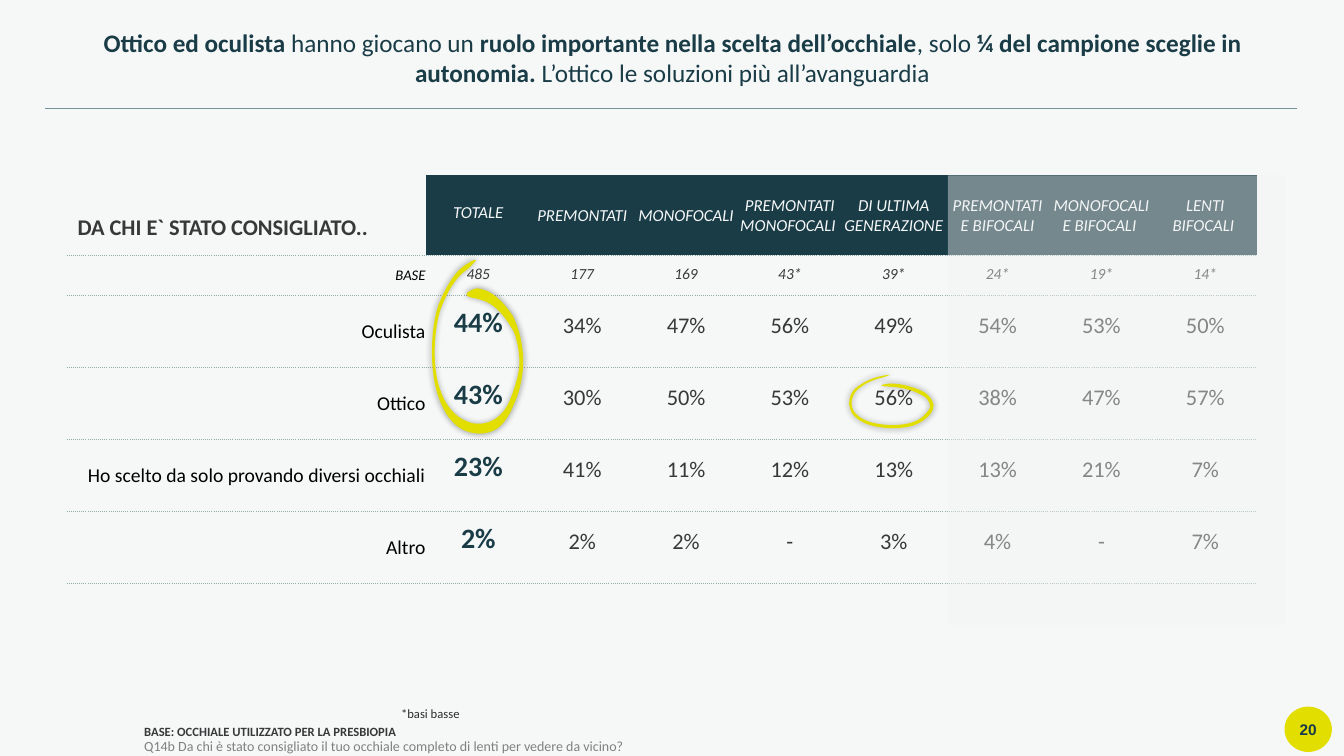
from dataclasses import dataclass

from lxml import etree
from pptx import Presentation
from pptx.dml.color import RGBColor
from pptx.enum import shapes, text
from pptx.oxml import ns
from pptx.util import Inches, Pt

COLOURS = {
    "paper": "F6F8F8", "navy": "1A3C47", "number": "193B47", "ink": "383839", "black": "000000",
    "note": "2B2B2B", "grey": "808080", "rule": "76929C", "dots": "95ACAC", "lime": "E2DE00",
    "veil": "F2F2F2",
}
HEADERS = [
    "TOTALE", "PREMONTATI", "MONOFOCALI", "PREMONTATI MONOFOCALI ", "DI ULTIMA GENERAZIONE ",
    "PREMONTATI E BIFOCALI", "MONOFOCALI E BIFOCALI ", "LENTI BIFOCALI ",
]
ANSWERS = [
    ["Oculista", "44%", "34%", "47%", "56%", "49%", "54%", "53%", "50%"],
    ["Ottico", "43%", "30%", "50%", "53%", "56%", "38%", "47%", "57%"],
    ["Ho scelto da solo provando diversi occhiali",
     "23%", "41%", "11%", "12%", "13%", "13%", "21%", "7%"],
    ["Altro", "2%", "2%", "2%", "-", "3%", "4%", "-", "7%"],
]
BASES = ["BASE", "485", "177", "169", "43*", "39*", "24*", "19*", "14*"]
ANSWERS_HEIGHT = 2.86
ROW_HEIGHTS = [0.79, 0.4] + [ANSWERS_HEIGHT / len(ANSWERS)] * len(ANSWERS)
COLUMN_WIDTHS = [3.57] + [1.03] * len(HEADERS)
LOOP_WIDTH, LOOP_HEIGHT = 0.94, 1.76
LOOP_START = (0.41, 0.05)
LOOP_CURVES = [
    ((0.41, 0.07), (0.27, 0.07), (0.11, 0.45)), ((0.03, 0.63), (0, 1.08), (0.09, 1.36)),
    ((0.18, 1.64), (0.32, 1.73), (0.46, 1.75)), ((0.59, 1.76), (0.73, 1.74), (0.84, 1.48)),
    ((0.89, 1.37), (0.94, 1.22), (0.94, 1.01)), ((0.93, 0.8), (0.88, 0.68), (0.84, 0.59)),
    ((0.65, 0.3), (0.5, 0.32), (0.48, 0.31)), ((0.4, 0.33), (0.3, 0.39), (0.47, 0.41)),
    ((0.52, 0.43), (0.68, 0.43), (0.85, 0.75)), ((0.88, 0.83), (0.91, 0.96), (0.9, 1.1)),
    ((0.88, 1.23), (0.84, 1.35), (0.79, 1.46)), ((0.7, 1.63), (0.56, 1.67), (0.44, 1.65)),
    ((0.32, 1.62), (0.19, 1.54), (0.11, 1.3)), ((0.03, 1.06), (0.06, 0.7), (0.12, 0.52)),
    ((0.26, 0.15), (0.4, 0.13), (0.41, 0.1)), ((0.47, 0.04), (0.51, 0), (0.41, 0.05)),
]


@dataclass(frozen=True)
class Area:
    left: float
    top: float
    width: float
    height: float

    def lengths(self) -> list:
        return [Inches(side) for side in (self.left, self.top, self.width, self.height)]


@dataclass(frozen=True)
class Style:
    size: float
    colour: str
    bold: bool = False
    italic: bool = False
    font: str = "Calibri"


@dataclass(frozen=True)
class Label:
    area: Area
    words: str
    style: Style
    align: text.PP_ALIGN = text.PP_ALIGN.LEFT


LABELS = [
    Label(Area(0.58, 2.07, 3.26, 0.37), "DA CHI E` STATO CONSIGLIATO..",
          Style(16, "ink", bold=True), text.PP_ALIGN.CENTER),
    Label(Area(3.88, 6.95, 2.04, 0.25), "*basi basse", Style(9, "note")),
]
LOOPS = [Area(4.25, 2.55, 0.94, 1.76), Area(8.39, 3.71, 0.87, 0.54)]
TITLE = [
    ("Ottico ed oculista ", True), ("hanno giocano un ", False),
    ("ruolo importante nella scelta dell’occhiale", True), (", solo ", False),
    ("¼ del campione sceglie in autonomia. ", True),
    ("L’ottico le soluzioni più all’avanguardia", False),
]
SOURCE = [
    ("BASE: OCCHIALE UTILIZZATO PER LA PRESBIOPIA", Style(9, "ink", bold=True)),
    ("Q14b Da chi è stato consigliato il tuo occhiale completo di lenti per vedere da vicino?",
     Style(10, "grey")),
]


def colour(name: str) -> RGBColor:
    return RGBColor.from_string(COLOURS[name])


def add_span(para, words: str, style: Style) -> None:
    span = para.add_run()
    span.text = words
    font = span.font
    font.name, font.size = style.font, Pt(style.size)
    font.bold, font.italic = style.bold, style.italic
    font.color.rgb = colour(style.colour)


def clear_margins(frame) -> None:
    frame.margin_left = frame.margin_top = frame.margin_right = frame.margin_bottom = 0


def paint(shape, fill: str) -> None:
    shape.shadow.inherit = False
    shape.fill.solid()
    shape.fill.fore_color.rgb = colour(fill)
    shape.line.fill.background()


def add_colour(parent, name: str, alpha: int = 100) -> None:
    tone = etree.SubElement(parent, ns.qn("a:srgbClr"), val=COLOURS[name])
    if alpha < 100:
        etree.SubElement(tone, ns.qn("a:alpha"), val=str(alpha * 1000))


def add_title(page) -> None:
    box = page.shapes.title
    box.left, box.top, box.width, box.height = Area(0.34, 0.22, 12.66, 0.71).lengths()
    frame = box.text_frame
    frame.auto_size = text.MSO_AUTO_SIZE.SHAPE_TO_FIT_TEXT
    frame.vertical_anchor = text.MSO_ANCHOR.TOP
    para = frame.paragraphs[0]
    para.alignment = text.PP_ALIGN.CENTER
    for words, bold in TITLE:
        add_span(para, words, Style(18, "navy", bold))


def add_rule(page) -> None:
    rule = page.shapes.add_connector(
        shapes.MSO_CONNECTOR.STRAIGHT, Inches(0.45), Inches(1.08), Inches(12.86), Inches(1.08))
    rule.line.color.rgb = colour("rule")
    rule.line.width = Pt(0.5)
    etree.SubElement(rule._element.spPr, ns.qn("a:effectLst"))


def add_page_number(page) -> None:
    badge = page.shapes.add_shape(
        shapes.MSO_SHAPE.OVAL, *Area(12.74, 7.01, 0.47, 0.45).lengths())
    paint(badge, "lime")
    clear_margins(badge.text_frame)
    para = badge.text_frame.paragraphs[0]
    para.alignment = text.PP_ALIGN.CENTER
    add_span(para, "20", Style(11, "number", bold=True, font="Arial"))


def add_source(page) -> None:
    frame = page.shapes.add_textbox(*Area(1.43, 6.56, 11.91, 0.93).lengths()).text_frame
    frame.word_wrap = True
    frame.vertical_anchor = text.MSO_ANCHOR.BOTTOM
    clear_margins(frame)
    for index, (words, style) in enumerate(SOURCE):
        para = frame.add_paragraph() if index else frame.paragraphs[0]
        para.line_spacing = 0.95
        add_span(para, words, style)


def add_label(page, label: Label) -> None:
    frame = page.shapes.add_textbox(*label.area.lengths()).text_frame
    frame.word_wrap = True
    frame.auto_size = text.MSO_AUTO_SIZE.SHAPE_TO_FIT_TEXT
    para = frame.paragraphs[0]
    para.alignment = label.align
    add_span(para, label.words, label.style)


def cell_style(row: int, column: int) -> Style:
    if row == 0:
        return Style(12, "paper", italic=True)
    if row == 1:
        return Style(11, "ink", italic=True) if column else Style(10.5, "black", italic=True)
    if column == 0:
        return Style(14, "black")
    return Style(20, "navy", bold=True) if column == 1 else Style(16, "ink")


def add_dotted_bottom(cell) -> None:
    edge = etree.Element(ns.qn("a:lnB"), w=str(Pt(0.5)))
    add_colour(etree.SubElement(edge, ns.qn("a:solidFill")), "dots")
    etree.SubElement(edge, ns.qn("a:prstDash"), val="sysDot")
    cell._tc.get_or_add_tcPr().insert(0, edge)


def fill_cell(cell, words: str, row: int, column: int) -> None:
    cell.margin_left = cell.margin_top = cell.margin_right = Inches(0.01)
    cell.margin_bottom = 0
    cell.vertical_anchor = text.MSO_ANCHOR.MIDDLE
    if row == 0 and column:
        cell.fill.solid()
        cell.fill.fore_color.rgb = colour("navy")
    else:
        cell.fill.background()
    add_dotted_bottom(cell)
    if words:
        para = cell.text_frame.paragraphs[0]
        para.alignment = text.PP_ALIGN.CENTER if column else text.PP_ALIGN.RIGHT
        if column == 1 or (row and column):
            para.line_spacing = Pt(11)
        add_span(para, words, cell_style(row, column))


def add_answers(page) -> None:
    rows = [[""] + HEADERS, BASES, *ANSWERS]
    area = Area(0.66, 1.74, sum(COLUMN_WIDTHS), sum(ROW_HEIGHTS))
    table = page.shapes.add_table(len(rows), len(COLUMN_WIDTHS), *area.lengths()).table
    table.first_row = table.horz_banding = False
    table._tbl.tblPr.find(ns.qn("a:tableStyleId")).text = "{2D5ABB26-0587-4C30-8999-92F81FD0307C}"
    for column, width in zip(table.columns, COLUMN_WIDTHS):
        column.width = Inches(width)
    for row, (height, values) in enumerate(zip(ROW_HEIGHTS, rows)):
        table.rows[row].height = Inches(height)
        for column, words in enumerate(values):
            fill_cell(table.cell(row, column), words, row, column)


def bend_segments(shape) -> None:
    segments = list(shape._element.iter(ns.qn("a:lnTo")))
    for first, second, end in zip(segments[::3], segments[1::3], segments[2::3]):
        first.tag = ns.qn("a:cubicBezTo")
        for segment in (second, end):
            first.append(segment[0])
            segment.getparent().remove(segment)


def add_loop(page, area: Area) -> None:
    corners = [LOOP_START] + [corner for curve in LOOP_CURVES for corner in curve]
    points = [(Inches(area.left + x * area.width / LOOP_WIDTH),
               Inches(area.top + y * area.height / LOOP_HEIGHT)) for x, y in corners]
    builder = page.shapes.build_freeform(*points[0])
    builder.add_line_segments(points[1:], close=True)
    loop = builder.convert_to_shape()
    bend_segments(loop)
    paint(loop, "lime")
    effects = loop._element.spPr.find(ns.qn("a:effectLst"))
    glow = etree.SubElement(effects, ns.qn("a:outerShdw"), blurRad=str(Pt(5)), dist="0", dir="0")
    add_colour(glow, "black", 40)


def add_veil(page) -> None:
    veil = page.shapes.add_shape(
        shapes.MSO_SHAPE.RECTANGLE, *Area(9.4, 1.74, 3.35, 4.46).lengths())
    paint(veil, "veil")
    fill = veil._element.spPr.find(ns.qn("a:solidFill"))
    fill.clear()
    add_colour(fill, "veil", 42)


def main() -> None:
    """Build the slide on who recommended the glasses."""
    deck = Presentation()
    deck.slide_width, deck.slide_height = Inches(13.33), Inches(7.5)
    page = deck.slides.add_slide(deck.slide_layouts[5])
    page.background.fill.solid()
    page.background.fill.fore_color.rgb = colour("paper")
    for draw in (add_title, add_page_number, add_rule, add_source, add_answers):
        draw(page)
    for label in LABELS:
        add_label(page, label)
    for area in LOOPS:
        add_loop(page, area)
    add_veil(page)
    deck.save("out.pptx")


if __name__ == "__main__":
    main()
